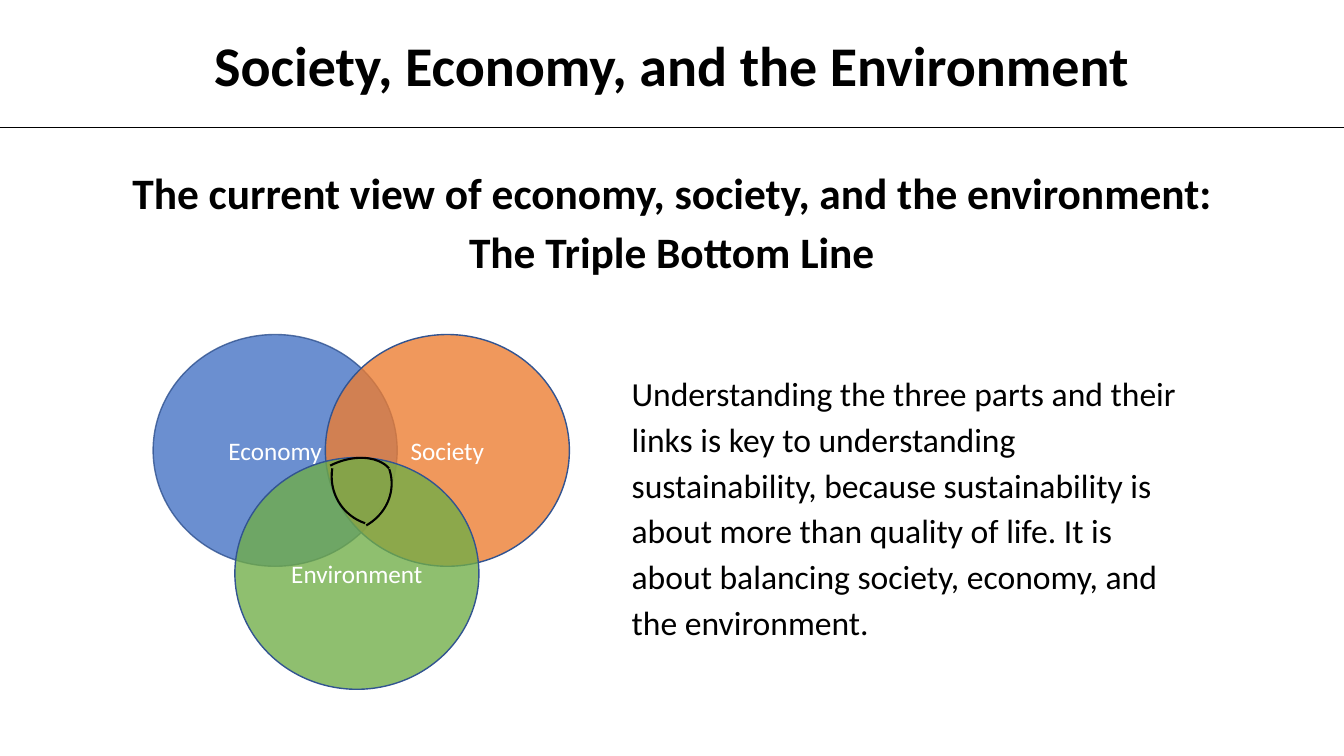
from lxml.etree import SubElement
from pptx import Presentation
from pptx.dml.color import RGBColor
from pptx.enum.shapes import MSO_CONNECTOR as CONN, MSO_SHAPE as SHAPE
from pptx.enum.text import MSO_ANCHOR as ANCHOR, MSO_AUTO_SIZE as FIT, PP_ALIGN as ALIGN
from pptx.oxml.ns import qn
from pptx.util import Cm, Pt

WIDTH, HEIGHT = 33.87, 19.05


def rgb(value):
    """Return the colour of a hex string."""
    return RGBColor.from_string(value)


def set_alpha(fill_parent, percent):
    """Make the solid fill of an element partly opaque."""
    color = fill_parent.find(qn("a:solidFill")).find(qn("a:srgbClr"))
    SubElement(color, qn("a:alpha"), val=str(percent * 1000))


class SlideBuilder:
    """Hold the slide and its style, and draw each kind of element."""

    font, ink, paper, outline = "Calibri", "000000", "FFFFFF", "325491"

    def __init__(self, slide):
        """Start on a slide with a group for the diagram."""
        self.slide = slide
        self.group = None

    def paragraph(self, tf, text, size, color=None, bold=False, align=ALIGN.LEFT, spacing=None):
        """Fill a text frame with one styled paragraph."""
        p = tf.paragraphs[0]
        p.text = text
        p.alignment = align
        p.line_spacing = spacing
        p.font.name, p.font.size, p.font.bold = self.font, Pt(size), bold
        p.font.color.rgb = rgb(color or self.ink)
        return p

    def title(self, text, box, size):
        """Place and format the title placeholder."""
        sp = self.slide.shapes.title
        sp.left, sp.top, sp.width, sp.height = map(Cm, box)
        tf = sp.text_frame
        tf.vertical_anchor = ANCHOR.MIDDLE
        tf.auto_size = FIT.SHAPE_TO_FIT_TEXT
        self.paragraph(tf, text, size, bold=True, align=ALIGN.CENTER, spacing=1.14)

    def text(self, text, box, size, wrap=True, **style):
        """Add a text box that grows with its text."""
        tf = self.slide.shapes.add_textbox(*map(Cm, box)).text_frame
        tf.word_wrap = wrap
        tf.auto_size = FIT.SHAPE_TO_FIT_TEXT
        return self.paragraph(tf, text, size, **style)

    def shape(self, kind, box, line, width):
        """Add an outlined preset shape to the diagram group."""
        if self.group is None:
            self.group = self.slide.shapes.add_group_shape()
        sp = self.group.shapes.add_shape(kind, *map(Cm, box))
        sp.shadow.inherit = False
        sp.line.color.rgb, sp.line.width = rgb(line), Pt(width)
        return sp

    def circle(self, label, left, top, color, alpha, line_alpha=100):
        """Add a labelled translucent circle."""
        sp = self.shape(SHAPE.OVAL, (left, top, 6.15, 5.84), self.outline, 1)
        sp.fill.solid()
        sp.fill.fore_color.rgb = rgb(color)
        set_alpha(sp.element.spPr, alpha)
        set_alpha(sp.element.spPr.find(qn("a:ln")), line_alpha)
        sp.text_frame.vertical_anchor = ANCHOR.MIDDLE
        self.paragraph(sp.text_frame, label, 18, self.paper, align=ALIGN.CENTER)

    def arc(self, box, rotation, start, end):
        """Add an open arc, turned by an angle in degrees."""
        sp = self.shape(SHAPE.ARC, box, self.ink, 1.5)
        sp.fill.background()
        sp.adjustments[0], sp.adjustments[1] = start, end
        sp.rotation = rotation

    def rule(self, y):
        """Add a thin line across the slide."""
        c = self.slide.shapes.add_connector(CONN.STRAIGHT, 0, Cm(y), Cm(WIDTH), Cm(y))
        c.line.color.rgb, c.line.width = rgb(self.ink), Pt(0.5)
        SubElement(c.element.spPr, qn("a:effectLst"))


def main():
    """Build and save the slide."""
    prs = Presentation()
    prs.slide_width, prs.slide_height = Cm(WIDTH), Cm(HEIGHT)
    s = SlideBuilder(prs.slides.add_slide(prs.slide_layouts[5]))

    s.title("The current view of economy, society, and the environment:\v"
            "The Triple Bottom Line", (2.84, 3.89, 28.17, 3.2), 31)
    s.text("Understanding the three parts and their links is key to understanding "
           "sustainability, because sustainability is about more than quality of life. "
           "It is about balancing society, economy, and the environment.",
           (15.67, 9.12, 14.27, 7.21), 24, spacing=1.14)

    s.circle("Economy", 3.86, 8.43, "4472C4", 79, line_alpha=81)
    s.circle("Society", 8.2, 8.43, "ED7D31", 79)
    s.circle("Environment", 5.92, 11.53, "70AD47", 78)

    s.arc((8.36, 10.74, 2.49, 2.51), 209.3, 155.65, 203.8)
    s.arc((7.44, 11.63, 2.59, 1.75), 334.2, 160.61, 211.48)
    s.arc((7.44, 10.97, 2.36, 2.51), 73.4, 160.67, 207.37)

    heading = s.text("Society, Economy, and the Environment", (5, 0.64, 23.85, 1.96), 40,
                     wrap=False, bold=True, align=ALIGN.CENTER)
    heading.space_before = Pt(1)
    s.rule(3.2)
    prs.save("out.pptx")


if __name__ == "__main__":
    main()
